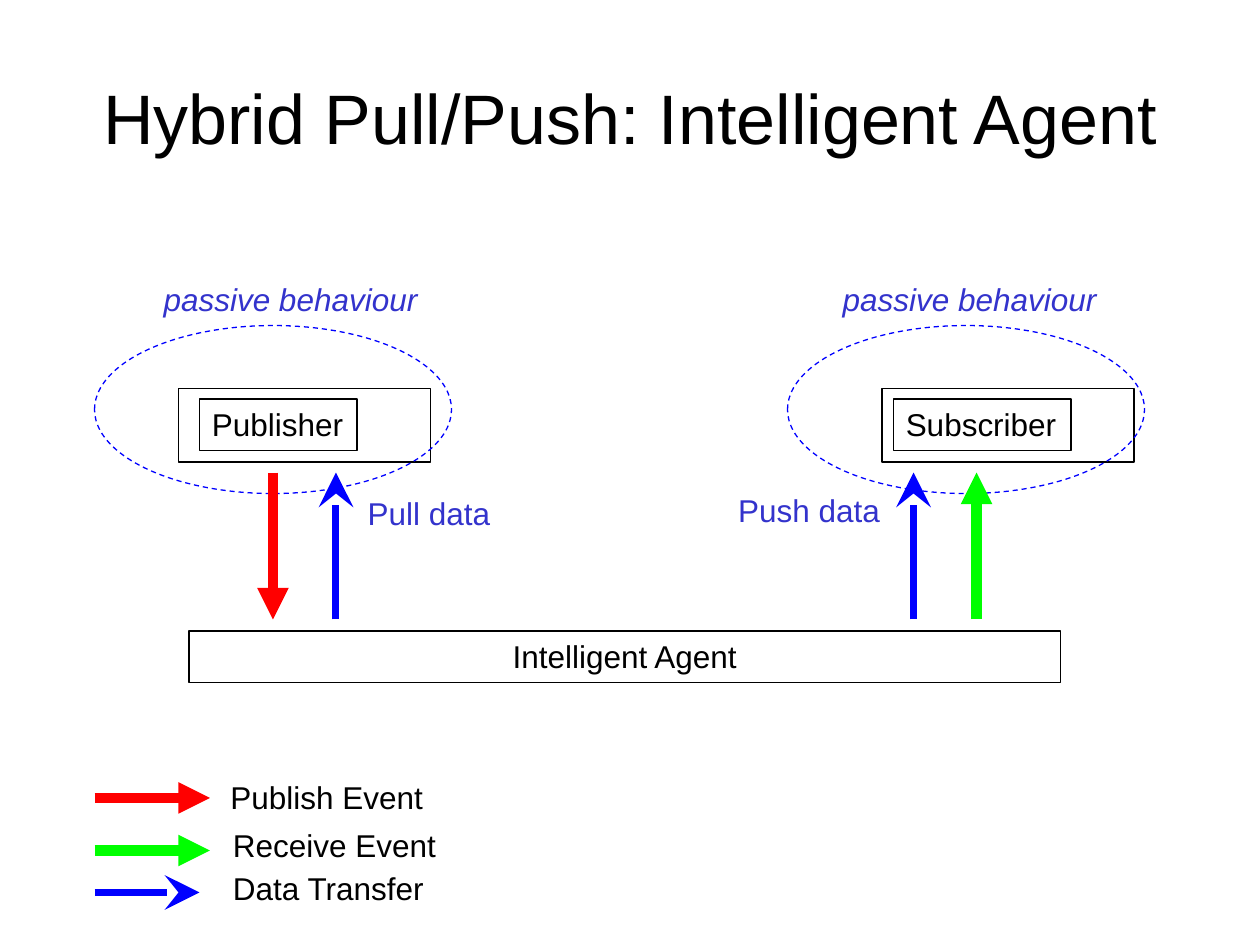
from lxml.etree import SubElement
from pptx import Presentation
from pptx.dml.color import RGBColor
from pptx.enum.dml import MSO_LINE
from pptx.enum.shapes import MSO_CONNECTOR, MSO_SHAPE
from pptx.enum.text import MSO_ANCHOR, PP_ALIGN
from pptx.oxml.ns import qn
from pptx.util import Pt

COLORS = {
    "ink": "000000",
    "note": "3333CC",
    "publish": "FF0000",
    "receive": "00FF00",
    "data": "0000FF",
}
ARROWS = {
    "publish": (6, "triangle", "med"),
    "receive": (6, "triangle", "med"),
    "data": (4, "stealth", "lg"),
}


def rgb(name):
    return RGBColor.from_string(COLORS[name])


def write(holder, text, size=18, color="ink", italic=False,
          align=PP_ALIGN.LEFT, anchor=MSO_ANCHOR.TOP, wrap=False):
    frame = holder.text_frame
    frame.word_wrap = wrap
    frame.vertical_anchor = anchor
    paragraph = frame.paragraphs[0]
    paragraph.alignment = align
    run = paragraph.add_run()
    run.text = text
    run.font.name = "Arial"
    run.font.size = Pt(size)
    run.font.italic = italic
    run.font.color.rgb = rgb(color)


def add_label(slide, box, text, **style):
    label = slide.shapes.add_textbox(*map(Pt, box))
    write(label, text, **style)


def add_outline(slide, preset, box, color="ink", dash=None):
    outline = slide.shapes.add_shape(preset, *map(Pt, box))
    outline.shadow.inherit = False
    outline.fill.background()
    outline.line.color.rgb = rgb(color)
    outline.line.width = Pt(0.75)
    if dash:
        outline.line.dash_style = dash
    return outline


def add_arrow(slide, start, end, flow):
    width, head, size = ARROWS[flow]
    arrow = slide.shapes.add_connector(
        MSO_CONNECTOR.STRAIGHT, *map(Pt, (*start, *end)))
    arrow.line.color.rgb = rgb(flow)
    arrow.line.width = Pt(width)
    SubElement(arrow.line._get_or_add_ln(), qn("a:tailEnd"),
               type=head, w=size, len=size)
    SubElement(arrow._element.spPr, qn("a:effectLst"))


def build_participant(slide, box, name, frame_inset, name_inset, name_width, note_inset):
    left, top, width, height = box
    add_outline(slide, MSO_SHAPE.RECTANGLE, (left + frame_inset, top + 36, 144, 42))
    name_box = add_outline(slide, MSO_SHAPE.RECTANGLE,
                           (left + name_inset, top + 42, name_width, 29.5))
    write(name_box, name)
    add_outline(slide, MSO_SHAPE.OVAL, box, "data", MSO_LINE.DASH)
    add_label(slide, (left + note_inset, top - 29.8, 160, 29),
              "passive behaviour", color="note", italic=True)


def build_flows(slide, box, flows, caption, caption_box):
    left, top, width, height = box
    for index, (flow, upward) in enumerate(flows):
        x = left + index * width
        ends = [(x, top), (x, top + height)]
        if upward:
            ends.reverse()
        add_arrow(slide, *ends, flow)
    add_label(slide, caption_box, caption, color="note")


def build_agent(slide, box):
    agent = add_outline(slide, MSO_SHAPE.RECTANGLE, box)
    write(agent, "Intelligent Agent", align=PP_ALIGN.CENTER, wrap=True)


def build_legend(slide, box):
    left, top, width, height = box
    entries = [
        ("Publish Event", "publish", 66, 15.2, 70.6, 0, 124.5),
        ("Receive Event", "receive", 66, 45.2, 72, 27.4, 130.5),
        ("Data Transfer", "data", 60, 69.2, 72, 52.5, 124.5),
    ]
    for meaning, flow, length, arrow_y, text_x, text_y, text_width in entries:
        y = top + arrow_y
        add_arrow(slide, (left, y), (left + length, y), flow)
        add_label(slide, (left + text_x, top + text_y, text_width, 29), meaning)


def main():
    deck = Presentation()
    deck.slide_width, deck.slide_height = Pt(720), Pt(540)
    slide = deck.slides.add_slide(deck.slide_layouts[6])

    add_label(slide, (36, 21.6, 648, 90), "Hybrid Pull/Push: Intelligent Agent",
              size=40, align=PP_ALIGN.CENTER, anchor=MSO_ANCHOR.MIDDLE, wrap=True)
    build_participant(slide, (54, 186, 204, 96), "Publisher", 48, 60, 90, 32.4)
    build_participant(slide, (450, 186, 204, 96), "Subscriber", 54, 60.5, 101.5, 24.5)
    build_flows(slide, (156, 270, 36, 84), [("publish", False), ("data", True)],
                "Pull data", (203, 278.8, 84.5, 29))
    build_flows(slide, (522, 270, 36, 84), [("data", True), ("receive", True)],
                "Push data", (414.7, 277.2, 96, 29))
    build_agent(slide, (108, 360.5, 498, 29.5))
    build_legend(slide, (54, 440.8, 202, 81.5))

    deck.save("out.pptx")


if __name__ == "__main__":
    main()
